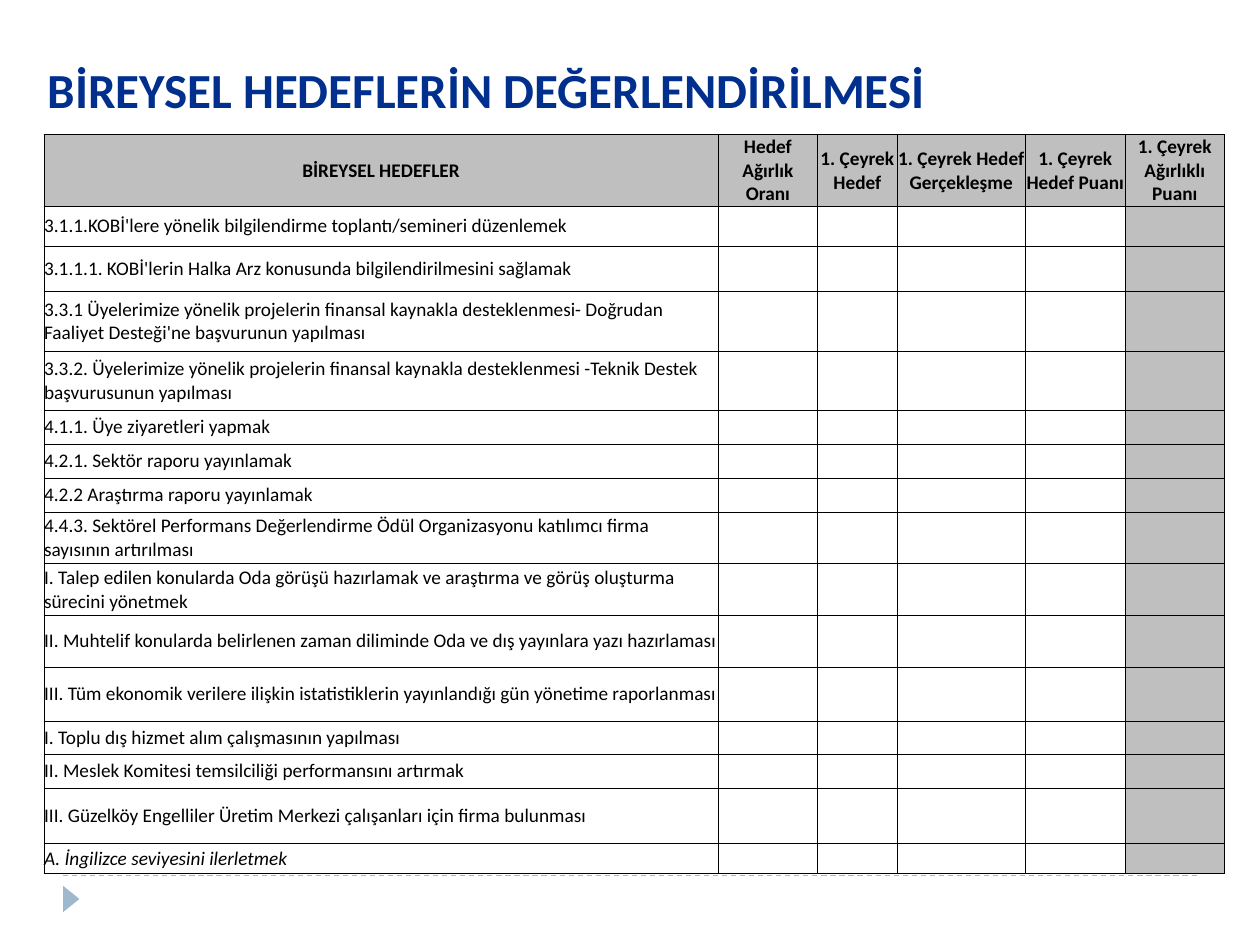
import pptx
import pptx.util
import pptx.dml.color
import pptx.enum.dml
import pptx.enum.shapes
import pptx.enum.text
import pptx.oxml
import pptx.oxml.ns
import lxml.etree

Inches = pptx.util.Inches
Pt = pptx.util.Pt
RGBColor = pptx.dml.color.RGBColor
Align = pptx.enum.text.PP_ALIGN
Anchor = pptx.enum.text.MSO_ANCHOR
qn = pptx.oxml.ns.qn

NAVY = RGBColor(0x00, 0x2F, 0x8E)
STEEL = RGBColor(0x9F, 0xB8, 0xCD)
GRAY = RGBColor(0xBF, 0xBF, 0xBF)
BLACK = RGBColor(0, 0, 0)

TITLE = "BİREYSEL HEDEFLERİN DEĞERLENDİRİLMESİ"
HEADS = [
    "BİREYSEL HEDEFLER", "Hedef Ağırlık Oranı", "1. Çeyrek Hedef",
    "1. Çeyrek Hedef Gerçekleşme", "1. Çeyrek Hedef Puanı",
    "1. Çeyrek Ağırlıklı Puanı",
]
WIDTHS = [5.35, 0.79, 0.63, 1.02, 0.79, 0.79]
HEAD_H = 0.56
# Goal text and row height
GOALS = [
    ("3.1.1.KOBİ'lere yönelik bilgilendirme toplantı/semineri düzenlemek", 0.32),
    ("3.1.1.1. KOBİ'lerin Halka Arz konusunda bilgilendirilmesini sağlamak", 0.36),
    ("3.3.1 Üyelerimize yönelik projelerin finansal kaynakla desteklenmesi- "
     "Doğrudan Faaliyet Desteği'ne başvurunun yapılması", 0.47),
    ("3.3.2. Üyelerimize yönelik projelerin finansal kaynakla desteklenmesi "
     "-Teknik Destek başvurusunun yapılması", 0.47),
    ("4.1.1. Üye ziyaretleri yapmak", 0.27),
    ("4.2.1. Sektör raporu yayınlamak", 0.27),
    ("4.2.2 Araştırma raporu yayınlamak", 0.27),
    ("4.4.3. Sektörel Performans Değerlendirme Ödül Organizasyonu katılımcı "
     "firma sayısının artırılması", 0.41),
    ("I. Talep edilen konularda Oda görüşü hazırlamak ve araştırma ve görüş "
     "oluşturma sürecini yönetmek", 0.41),
    ("II. Muhtelif konularda belirlenen zaman diliminde Oda ve dış yayınlara "
     "yazı hazırlaması", 0.41),
    ("III. Tüm ekonomik verilere ilişkin istatistiklerin yayınlandığı gün "
     "yönetime raporlanması", 0.43),
    ("I. Toplu dış hizmet alım çalışmasının yapılması", 0.26),
    ("II. Meslek Komitesi temsilciliği performansını artırmak", 0.27),
    ("III. Güzelköy Engelliler Üretim Merkezi çalışanları için firma bulunması", 0.44),
    ("A. İngilizce seviyesini ilerletmek", 0.24),
]


def write(frame, text, size=11, color=BLACK, bold=False, italic=False,
          align=Align.LEFT):
    para = frame.paragraphs[0]
    para.alignment = align
    run = para.add_run()
    run.text = text
    font = run.font
    font.name, font.size = "Calibri", Pt(size)
    font.bold, font.italic = bold, italic
    font.color.rgb = color


class Deck:
    def __init__(self):
        self.prs = pptx.Presentation()
        self.prs.slide_width, self.prs.slide_height = Inches(10), Inches(7.5)
        self.slide = self.prs.slides.add_slide(self.prs.slide_layouts[5])
        self.shapes = self.slide.shapes

    def title(self, text, x, y, w, h):
        box = self.shapes.title
        box.left, box.top, box.width, box.height = map(Inches, (x, y, w, h))
        frame = box.text_frame
        frame.word_wrap = True
        frame.vertical_anchor = Anchor.BOTTOM
        write(frame, text, size=28, color=NAVY, bold=True)

    def rule(self, x, y, end):
        line = self.shapes.add_connector(
            pptx.enum.shapes.MSO_CONNECTOR.STRAIGHT,
            Inches(x), Inches(y), Inches(end), Inches(y))
        line.line.color.rgb = STEEL
        line.line.width = Pt(0.75)
        line.line.dash_style = pptx.enum.dml.MSO_LINE.DASH
        lxml.etree.SubElement(line._element.spPr, qn("a:effectLst"))

    def arrow(self, x, y, w, h):
        mark = self.shapes.add_shape(
            pptx.enum.shapes.MSO_SHAPE.ISOSCELES_TRIANGLE,
            Inches(x), Inches(y), Inches(w), Inches(h))
        mark.rotation = 90
        mark.shadow.inherit = False
        mark.fill.solid()
        mark.fill.fore_color.rgb = STEEL
        mark.line.fill.background()

    def cell(self, cell, text="", shade=False, **form):
        cell.margin_left = cell.margin_right = 0
        cell.margin_top = cell.margin_bottom = 0
        cell.vertical_anchor = Anchor.MIDDLE
        props = cell._tc.get_or_add_tcPr()
        for side in ("lnL", "lnR", "lnT", "lnB"):
            edge = lxml.etree.SubElement(props, qn("a:" + side), w=str(Pt(0.5)))
            fill = lxml.etree.SubElement(edge, qn("a:solidFill"))
            lxml.etree.SubElement(fill, qn("a:srgbClr"), val=str(BLACK))
        if shade:
            cell.fill.solid()
            cell.fill.fore_color.rgb = GRAY
        else:
            cell.fill.background()
        if text:
            write(cell.text_frame, text, **form)
        else:
            # Small type keeps empty cells from stretching the row
            end = cell.text_frame.paragraphs[0]._p.get_or_add_endParaRPr()
            end.set("sz", "1100")

    def table(self, x, y):
        highs = [HEAD_H] + [high for _, high in GOALS]
        grid = self.shapes.add_table(
            len(highs), len(WIDTHS), Inches(x), Inches(y),
            Inches(sum(WIDTHS)), Inches(sum(highs))).table
        grid.horz_banding = False
        for col, wide in zip(grid.columns, WIDTHS):
            col.width = Inches(wide)
        for row, high in zip(grid.rows, highs):
            row.height = Inches(high)
        for col, head in enumerate(HEADS):
            self.cell(grid.cell(0, col), head, shade=True, bold=True,
                      align=Align.CENTER)
        last = len(WIDTHS) - 1
        for row, (goal, _) in enumerate(GOALS, 1):
            self.cell(grid.cell(row, 0), goal, italic=row == len(GOALS))
            for col in range(1, last + 1):
                self.cell(grid.cell(row, col), shade=col == last)


def main():
    deck = Deck()
    # Footer rule and marker
    deck.rule(0.5, 6.95, 9.5)
    deck.arrow(0.46, 7.07, 0.21, 0.13)
    # Goals table
    deck.table(0.35, 1.07)
    # Heading
    deck.title(TITLE, 0.28, 0.08, 8.09, 0.91)
    deck.prs.save("out.pptx")


if __name__ == "__main__":
    main()
